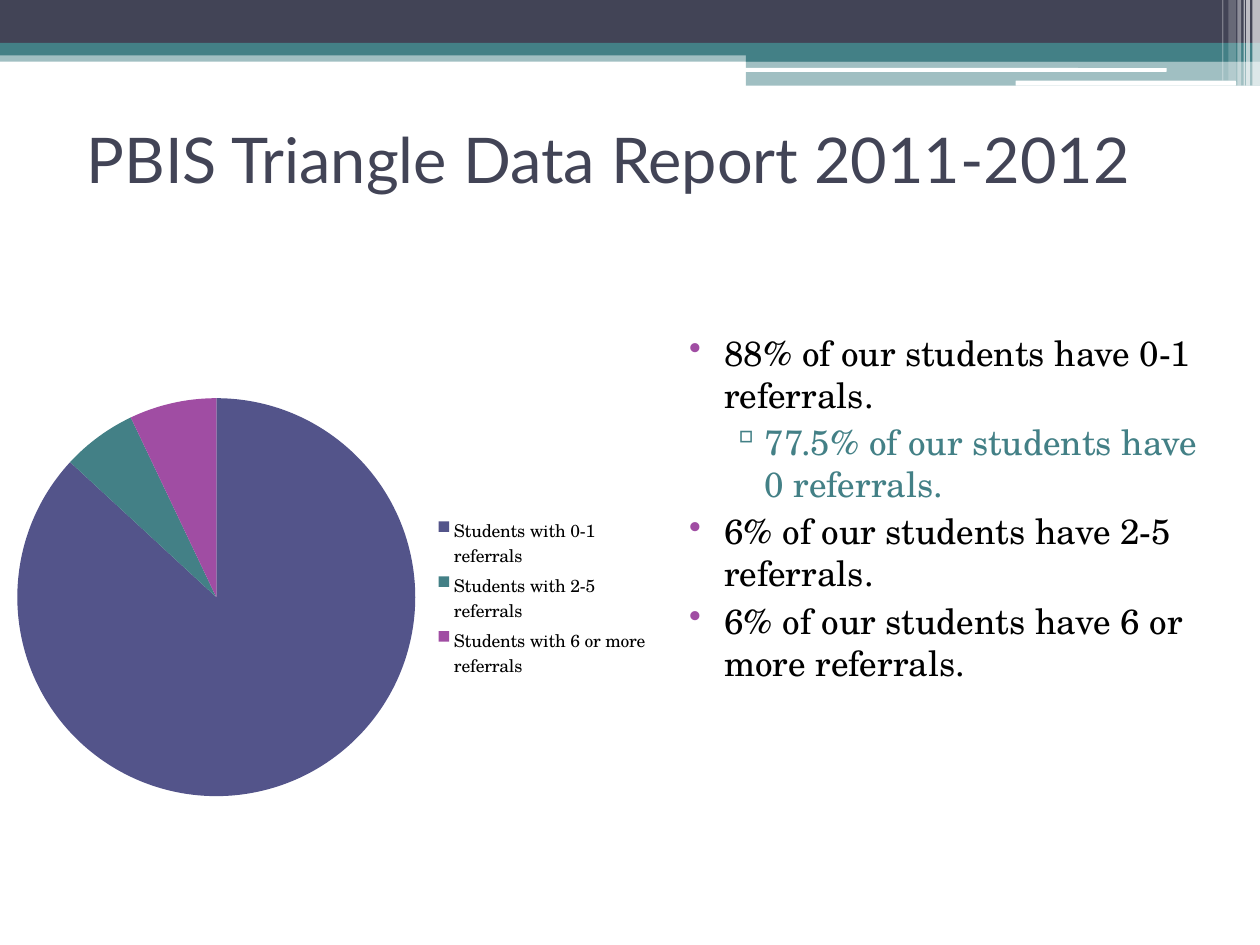
from lxml.etree import SubElement
from pptx import Presentation
from pptx.chart.data import CategoryChartData
from pptx.dml.color import RGBColor
from pptx.enum.chart import XL_CHART_TYPE, XL_LEGEND_POSITION
from pptx.enum.shapes import MSO_SHAPE
from pptx.enum.text import MSO_ANCHOR, PP_ALIGN
from pptx.oxml import parse_xml
from pptx.oxml.ns import nsdecls, qn
from pptx.util import Inches, Pt

HUES = {"navy": "424456", "teal": "438086", "violet": "A04DA3",
        "indigo": "53548A", "white": "FFFFFF", "black": "000000"}
SERIF = "TeX Gyre Schola"
TITLE = "PBIS Triangle Data Report 2011-2012"
# text, level
POINTS = [
    ("88% of our students have 0-1 referrals.", 0),
    ("77.5% of our students have 0 referrals.", 1),
    ("6% of our students have 2-5 referrals.", 0),
    ("6% of our students have 6 or more referrals.", 0),
]
# per level: left margin, hanging indent, bullet, bullet colour, text colour
LEVELS = [(0.4, -0.28, "•", "violet", "black"),
          (0.72, -0.27, "▫", "teal", "teal")]
# category, value, colour
SLICES = [
    ("Students with 0-1 referrals", 86, "indigo"),
    ("Students with 2-5 referrals", 6, "teal"),
    ("Students with 6 or more referrals", 7, "violet"),
]
PLOT = {"x": 0.026, "y": 0.172, "w": 0.602, "h": 0.654}
# left, top, width, height, colour, opacity in percent
BANDS = [
    (0, 0.4, 10, 0.09, "teal", 50),
    (0, 0, 10, 0.34, "navy", 100),
    (0, 0.34, 10, 0.1, "teal", 100),
    (5.92, 0.39, 4.08, 0.1, "teal", 100),
    (5.92, 0.48, 4.08, 0.2, "teal", 50),
]
PILLS = [(5.91, 0.54, 3.35, 0.03, "white", 100),
         (8.06, 0.64, 1.75, 0.04, "white", 100)]
# left, width, height, opacity in percent
STRIPES = [(9.94, 0.06, 0.68, 65), (9.89, 0.03, 0.68, 65),
           (9.87, 0.01, 0.68, 60), (9.82, 0.03, 0.68, 40),
           (9.75, 0.06, 0.64, 20), (9.7, 0.01, 0.64, 30)]


def rgb(name):
    return RGBColor.from_string(HUES[name])


def style(font, face, size, hue):
    for key, val in {"name": face, "size": Pt(size), "bold": False}.items():
        setattr(font, key, val)
    font.color.rgb = rgb(hue)


def add_bar(slide, kind, left, top, width, height, hue, alpha):
    bar = slide.shapes.add_shape(kind, *map(Inches, (left, top, width, height)))
    bar.shadow.inherit = False
    bar.line.fill.background()
    bar.fill.solid()
    bar.fill.fore_color.rgb = rgb(hue)
    if alpha < 100:
        tint = bar.fill._xPr.find(".//" + qn("a:srgbClr"))
        SubElement(tint, qn("a:alpha"), val=str(alpha * 1000))


def add_box(slide, *place):
    frame = slide.shapes.add_textbox(*map(Inches, place)).text_frame
    frame.word_wrap = True
    return frame


def add_title(slide):
    frame = add_box(slide, 0.33, 0.67, 9, 1.17)
    frame.vertical_anchor = MSO_ANCHOR.MIDDLE
    para = frame.paragraphs[0]
    para.alignment = PP_ALIGN.CENTER
    run = para.add_run()
    run.text = TITLE
    style(run.font, "Lato", 36, "navy")


def add_points(slide):
    frame = add_box(slide, 5.25, 2.58, 4.42, 4.12)
    for i, (text, level) in enumerate(POINTS):
        margin, hang, mark, tint, hue = LEVELS[level]
        para = frame.add_paragraph() if i else frame.paragraphs[0]
        para.level = level
        para.space_before = Pt(3)
        props = para._p.get_or_add_pPr()
        props.set("marL", str(Inches(margin)))
        props.set("indent", str(Inches(hang)))
        color = SubElement(props, qn("a:buClr"))
        SubElement(color, qn("a:srgbClr"), val=HUES[tint])
        SubElement(props, qn("a:buChar"), char=mark)
        run = para.add_run()
        run.text = text
        style(run.font, SERIF, 20, hue)


def add_pie(slide):
    names, vals, hues = zip(*SLICES)
    data = CategoryChartData()
    data.categories = names
    data.add_series("Series 1", vals)
    place = map(Inches, (0, 2.33, 5.25, 4.83))
    chart = slide.shapes.add_chart(XL_CHART_TYPE.PIE, *place, data).chart
    style(chart.font, SERIF, 10, "black")
    chart.has_title = False
    chart.has_legend = True
    chart.legend.position = XL_LEGEND_POSITION.RIGHT
    chart.legend.include_in_layout = False
    plot = chart.plots[0]
    plot.vary_by_categories = True
    for i, hue in enumerate(hues):
        fill = plot.series[0].points[i].format.fill
        fill.solid()
        fill.fore_color.rgb = rgb(hue)
    area = chart._chartSpace.chart.plotArea
    for old in area.findall(qn("c:layout")):
        area.remove(old)
    sizes = "".join(f'<c:{key} val="{val}"/>' for key, val in PLOT.items())
    area.insert(0, parse_xml(
        f'<c:layout {nsdecls("c")}><c:manualLayout><c:layoutTarget val="inner"/>'
        '<c:xMode val="edge"/><c:yMode val="edge"/>'
        f'{sizes}</c:manualLayout></c:layout>'))


def main():
    deck = Presentation()
    deck.slide_width, deck.slide_height = Inches(10), Inches(7.5)
    slide = deck.slides.add_slide(deck.slide_layouts[6])
    for band in BANDS:
        add_bar(slide, MSO_SHAPE.RECTANGLE, *band)
    for pill in PILLS:
        add_bar(slide, MSO_SHAPE.ROUNDED_RECTANGLE, *pill)
    for left, width, height, alpha in STRIPES:
        add_bar(slide, MSO_SHAPE.RECTANGLE, left, 0, width, height, "white", alpha)
    add_title(slide)
    add_points(slide)
    add_pie(slide)
    deck.save("out.pptx")


if __name__ == "__main__":
    main()
